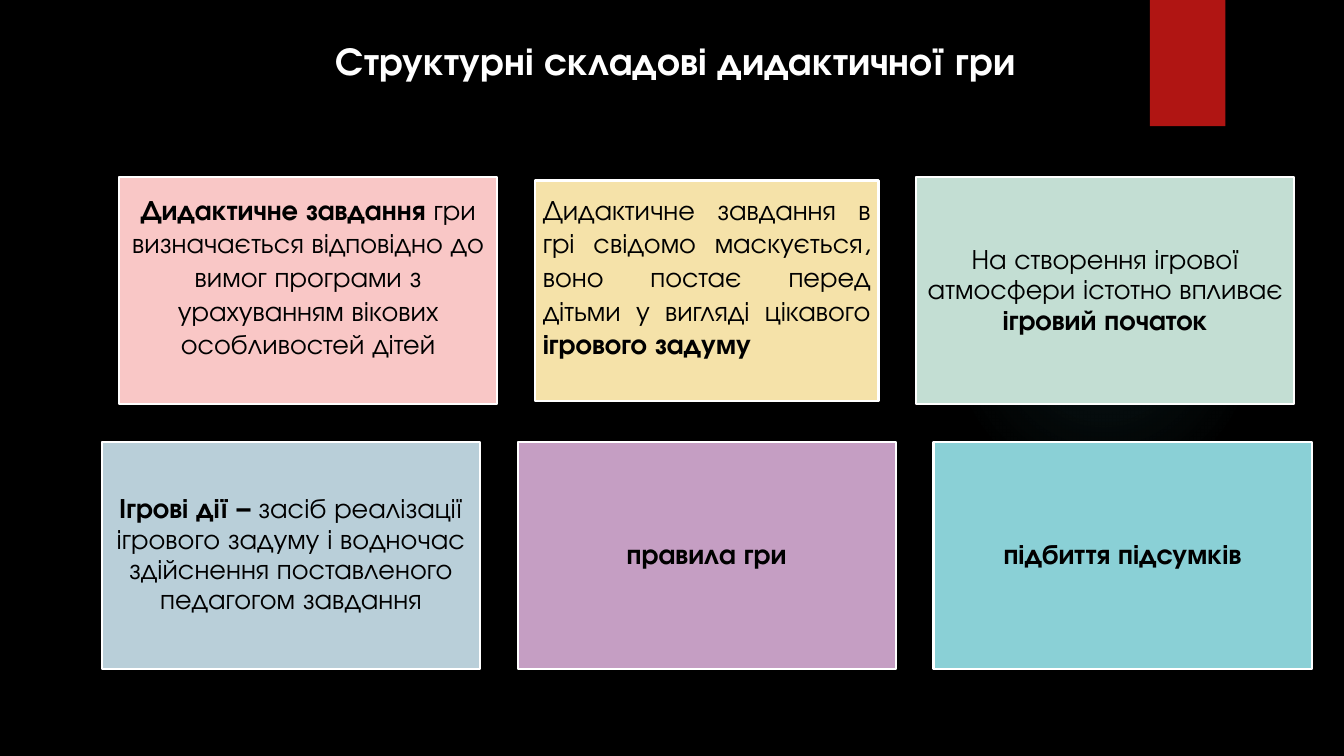
from dataclasses import dataclass

from lxml import etree
from pptx import Presentation
from pptx.dml.color import RGBColor
from pptx.enum.shapes import MSO_SHAPE as Preset
from pptx.enum.text import MSO_ANCHOR as Anchor, MSO_AUTO_SIZE as AutoSize, PP_ALIGN as Align
from pptx.oxml.ns import qn
from pptx.util import Cm, Pt


@dataclass(frozen=True)
class Theme:
    font: str = "TeX Gyre Adventor"
    title_size: int = 28
    body_size: int = 20
    background: str = "000000"
    ink: str = "000000"
    white: str = "FFFFFF"
    ribbon: str = "B01513"
    glow: str = "50B9C1"
    pink: str = "F9C7C6"
    yellow: str = "F5E2A9"
    green: str = "C3DED3"
    blue: str = "B9CFD9"
    violet: str = "C59EC3"
    teal: str = "8AD0D6"


theme = Theme()


def add_box(preset, left, top, width, height, color):
    box = page.shapes.add_shape(preset, Cm(left), Cm(top), Cm(width), Cm(height))
    box.shadow.inherit = False
    box.fill.solid()
    box.fill.fore_color.rgb = RGBColor.from_string(color)
    box.line.fill.background()
    return box


def add_span(para, text, size, color, bold):
    span = para.add_run()
    span.text = text
    look = {"name": theme.font, "size": Pt(size), "bold": bold}
    for key, value in look.items():
        setattr(span.font, key, value)
    span.font.color.rgb = RGBColor.from_string(color)


# Page
deck = Presentation()
deck.slide_width, deck.slide_height = Cm(33.87), Cm(19.05)
page = deck.slides.add_slide(deck.slide_layouts[5])
page.background.fill.solid()
page.background.fill.fore_color.rgb = RGBColor.from_string(theme.background)

# Faint round glow: a radial gradient that fades out
glow = add_box(Preset.OVAL, 23.9, 4.65, 7.82, 7.82, theme.glow)
solid = glow.fill._xPr.find(qn("a:solidFill"))
gradient = etree.Element(qn("a:gradFill"), rotWithShape="1")
stops = etree.SubElement(gradient, qn("a:gsLst"))
for position, opacity in [(0, 7), (36, 6), (69, 0)]:
    stop = etree.SubElement(stops, qn("a:gs"), pos=str(position * 1000))
    tint = etree.SubElement(stop, qn("a:srgbClr"), val=theme.glow)
    etree.SubElement(tint, qn("a:alpha"), val=str(opacity * 1000))
radial = etree.SubElement(gradient, qn("a:path"), path="circle")
etree.SubElement(radial, qn("a:fillToRect"), l="50000", t="50000", r="50000", b="50000")
solid.getparent().replace(solid, gradient)

# Red ribbon
add_box(Preset.RECTANGLE, 28.98, 0, 1.9, 3.18, theme.ribbon)

# Title
title = page.shapes.title
place = {"left": Cm(5.84), "top": Cm(0.79), "width": Cm(22.66), "height": Cm(1.45)}
for key, value in place.items():
    setattr(title, key, value)
frame = title.text_frame
layout = {"word_wrap": True, "auto_size": AutoSize.NONE, "vertical_anchor": Anchor.TOP}
for key, value in layout.items():
    setattr(frame, key, value)
frame.paragraphs[0].alignment = Align.CENTER
add_span(frame.paragraphs[0], "Структурні складові дидактичної гри ",
         theme.title_size, theme.white, True)

# Cards: colour, size, alignment, line spacing, bottom inset, (text, bold) spans
large, small = (9.53, 5.72), (8.66, 5.56)
rows = [
    (7.33, [
        (theme.pink, large, Align.CENTER, 1.0, 0.93, [
            ("Дидактичне завдання ", True),
            ("гри визначається відповідно до вимог програми з урахуванням "
             "вікових особливостей дітей", False)]),
        (theme.yellow, small, Align.JUSTIFY, 1.0, 0.93, [
            ("Дидактичне завдання в грі свідомо маскується, воно постає перед "
             "дітьми у вигляді цікавого ", False),
            ("ігрового задуму", True)]),
        (theme.green, large, Align.CENTER, 0.9, 0.2, [
            ("На створення ігрової атмосфери істотно впливає ", False),
            ("ігровий початок", True)]),
    ]),
    (13.99, [
        (theme.blue, large, Align.CENTER, 0.9, 0.2, [
            ("Ігрові дії – ", True),
            ("засіб реалізації ігрового задуму і водночас здійснення "
             "поставленого педагогом завдання", False)]),
        (theme.violet, large, Align.CENTER, 0.9, 0.2, [("правила гри", True)]),
        (theme.teal, large, Align.CENTER, 0.9, 0.2, [("підбиття підсумків", True)]),
    ]),
]

# Each row is centred on one axis, with equal gaps between its cards
axis, gap = 17.81, 0.95
for middle, cards in rows:
    row_width = sum(size[0] for _, size, *_ in cards) + gap * (len(cards) - 1)
    left = axis - row_width / 2
    for color, (width, height), alignment, spacing, bottom, spans in cards:
        card = add_box(Preset.RECTANGLE, left, middle - height / 2, width, height, color)
        card.line.color.rgb = RGBColor.from_string(theme.white)
        card.line.width = Pt(1.5)
        frame = card.text_frame
        layout = {"word_wrap": True, "vertical_anchor": Anchor.MIDDLE,
                  "margin_left": Cm(0.2), "margin_right": Cm(0.2),
                  "margin_top": Cm(0.2), "margin_bottom": Cm(bottom)}
        for key, value in layout.items():
            setattr(frame, key, value)
        para = frame.paragraphs[0]
        para.alignment, para.line_spacing = alignment, spacing
        for text, bold in spans:
            add_span(para, text, theme.body_size, theme.ink, bold)
        left += width + gap

deck.save("out.pptx")
